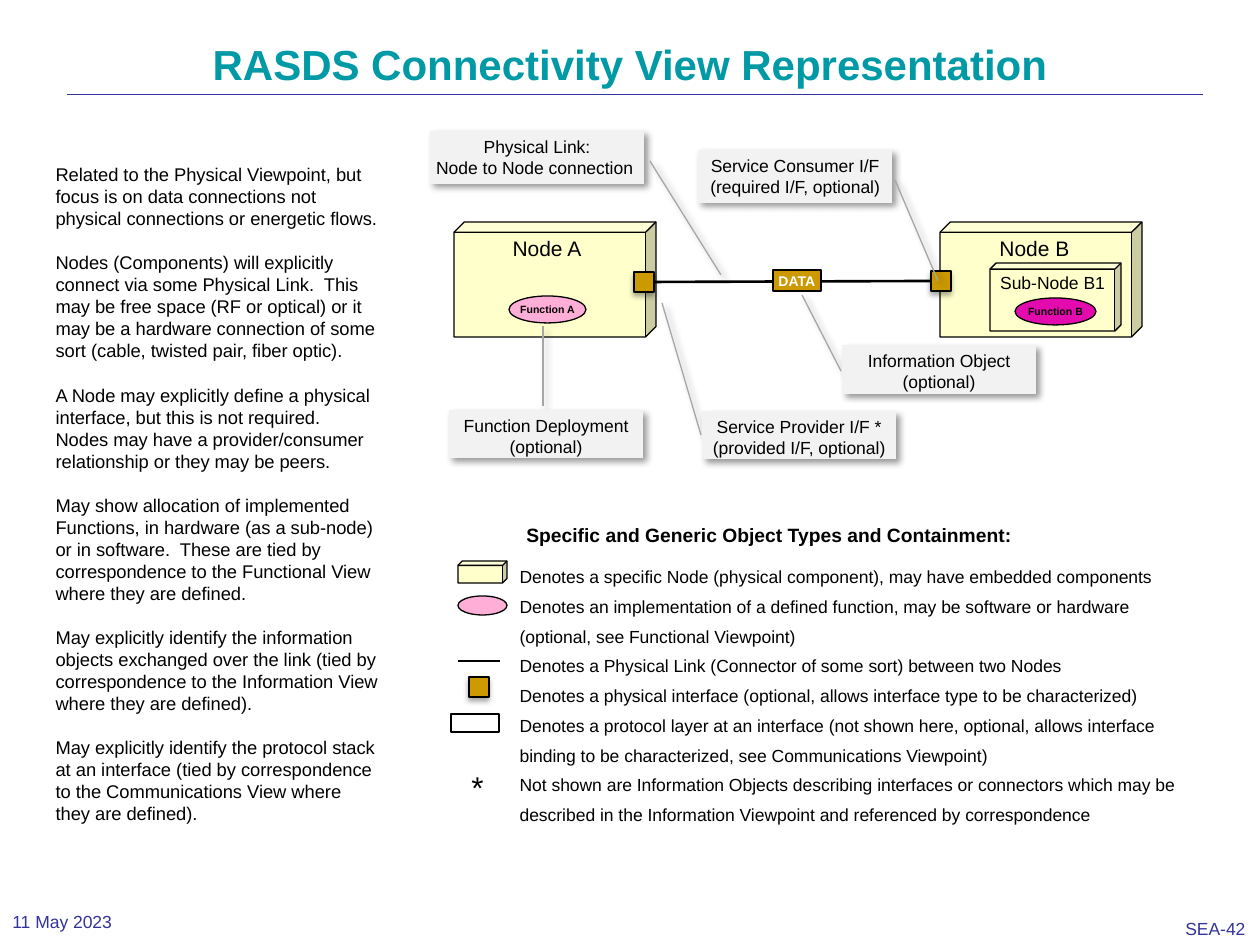
from dataclasses import dataclass

from lxml import etree
from pptx import Presentation
from pptx.dml.color import RGBColor
from pptx.enum.shapes import MSO_CONNECTOR, MSO_SHAPE
from pptx.enum.text import MSO_ANCHOR, MSO_AUTO_SIZE, PP_ALIGN
from pptx.oxml.ns import qn
from pptx.util import Pt

PX = 7257  # EMU per px, 126 px to the inch
TOP, MIDDLE = MSO_ANCHOR.TOP, MSO_ANCHOR.MIDDLE
LEFT, CENTER = PP_ALIGN.LEFT, PP_ALIGN.CENTER
CUBE, OVAL, RECT = MSO_SHAPE.CUBE, MSO_SHAPE.OVAL, MSO_SHAPE.RECTANGLE
CALLOUT = MSO_SHAPE.LINE_CALLOUT_1_NO_BORDER
STRAIGHT = MSO_CONNECTOR.STRAIGHT


@dataclass(frozen=True)
class Theme:
    font: str = "Arial"
    title: str = "0099A6"
    navy: str = "333399"
    black: str = "000000"
    white: str = "FFFFFF"
    node: str = "FFFFCC"
    port: str = "CC9900"
    function_a: str = "FFAED7"
    function_b: str = "E30BAD"
    callout: str = "F2F2F2"
    leader: str = "A6A6A6"
    title_pt: float = 24
    star_pt: float = 18
    node_pt: float = 12
    heading_pt: float = 11
    body_pt: float = 10.5
    label_pt: float = 10
    data_pt: float = 8
    function_pt: float = 6


T = Theme()
PORT_SHADOW = (35, 3.1, 1.8, 90)
CALLOUT_SHADOW = (40, 4, 3, 45)


def draw(kind, box, fill, line=T.black, shadow=None):
    """Add a preset shape; shadow is opacity %, blur pt, distance pt, angle."""
    sp = s.shapes.add_shape(kind, *[v * PX for v in box])
    sp.shadow.inherit = False
    sp.fill.solid()
    sp.fill.fore_color.rgb = RGBColor.from_string(fill)
    sp.line.color.rgb = RGBColor.from_string(line)
    sp.line.width = Pt(0.75)
    if shadow:
        alpha, blur, dist, angle = shadow
        effects = sp._element.spPr.find(qn("a:effectLst"))
        outer = etree.SubElement(
            effects, qn("a:outerShdw"), blurRad=str(Pt(blur)),
            dist=str(Pt(dist)), dir=str(angle * 60000), algn="ctr",
            rotWithShape="0")
        color = etree.SubElement(outer, qn("a:srgbClr"), val=T.black)
        etree.SubElement(color, qn("a:alpha"), val=str(alpha * 1000))
    return sp


def write(sp, text, size, color=T.black, bold=False, align=CENTER,
          anchor=TOP, wrap=False, inset=None):
    tf = sp.text_frame
    tf.text = text
    tf.word_wrap = wrap
    tf.auto_size = MSO_AUTO_SIZE.NONE
    tf.vertical_anchor = anchor
    if inset is not None:
        tf.margin_left = tf.margin_right = inset * PX
        tf.margin_top = tf.margin_bottom = inset * PX
    for p in tf.paragraphs:
        p.alignment = align
        p.font.name = T.font
        p.font.size = Pt(size)
        p.font.bold = bold
        p.font.color.rgb = RGBColor.from_string(color)


prs = Presentation()
prs.slide_width, prs.slide_height = 1260 * PX, 945 * PX
s = prs.slides.add_slide(prs.slide_layouts[3])
title, body, legend = s.placeholders

# Title and the two text columns
body_text = [
    "Related to the Physical Viewpoint, but focus is on data connections not physical connections or energetic flows.",
    "Nodes (Components) will explicitly connect via some Physical Link.  This may be free space (RF or optical) or it may be a hardware connection of some sort (cable, twisted pair, fiber optic).",
    "A Node may explicitly define a physical interface, but this is not required.  Nodes may have a provider/consumer relationship or they may be peers.",
    "May show allocation of implemented Functions, in hardware (as a sub-node) or in software.  These are tied by correspondence to the Functional View where they are defined.",
    "May explicitly identify the information objects exchanged over the link (tied by correspondence to the Information View where they are defined).",
    "May explicitly identify the protocol stack at an interface (tied by correspondence to the Communications View where they are defined).",
]
legend_text = [
    "Denotes a specific Node (physical component), may have embedded components",
    "Denotes an implementation of a defined function, may be software or hardware (optional, see Functional Viewpoint)",
    "Denotes a Physical Link (Connector of some sort) between two Nodes",
    "Denotes a physical interface (optional, allows interface type to be characterized)",
    "Denotes a protocol layer at an interface (not shown here, optional, allows interface binding to be characterized, see Communications Viewpoint)",
    "Not shown are Information Objects describing interfaces or connectors which may be described in the Information Viewpoint and referenced by correspondence",
]
for sp, box in [(title, (63, 38, 1134, 158)), (body, (43, 157, 349, 703)),
                (legend, (507, 551, 701, 280))]:
    sp.left, sp.top, sp.width, sp.height = [v * PX for v in box]

write(title, "RASDS Connectivity View Representation", T.title_pt, T.title,
      bold=True, wrap=True)
title.text_frame.paragraphs[0].line_spacing = 0.9

for sp, items, size, spacing, gap in [
        (body, body_text, T.body_pt, 1.0, 12.6),
        (legend, legend_text, T.label_pt, Pt(17), 0)]:
    write(sp, "\n".join(items), size, align=LEFT, wrap=True)
    for p in sp.text_frame.paragraphs:
        p.line_spacing = spacing
        p.space_before, p.space_after = Pt(0), Pt(gap)
        pPr = p._p.get_or_add_pPr()
        pPr.set("marL", "0")
        pPr.set("indent", "0")
        pPr.insert_element_before(etree.Element(qn("a:buNone")),
                                  "a:tabLst", "a:defRPr", "a:extLst")

# Nodes and interfaces
for box, depth in [((454, 222, 202, 115), 0.09), ((940, 222, 202, 115), 0.09),
                   ((990, 263, 131, 68), 0.09), ((458, 561, 49, 22), 0.2)]:
    draw(CUBE, box, T.node).adjustments[0] = depth

ports = [draw(RECT, (x, y, 20, 20), T.port, shadow=PORT_SHADOW)
         for x, y in [(634, 272), (931, 271), (469, 677)]]

# Title rule, physical link and its legend sample
rule, link, sample = [
    s.shapes.add_connector(STRAIGHT, x1 * PX, y * PX, x2 * PX, y * PX)
    for x1, x2, y in [(67, 1203, 94), (654, 931, 282), (458, 500, 661)]]
link.begin_connect(ports[0], 3)
link.end_connect(ports[1], 1)
for line, color, width in [(rule, T.navy, 0.13), (link, T.black, 1.5),
                           (sample, T.black, 1.5)]:
    line.line.color.rgb = RGBColor.from_string(color)
    line.line.width = Pt(width)
    etree.SubElement(line._element.spPr, qn("a:effectLst"))

# Information object, functions and remaining legend symbols
data = draw(RECT, (773, 270, 48, 21), T.port)
write(data, "DATA", T.data_pt, T.white, bold=True, wrap=True, inset=3)
for name, box, fill in [("Function A", (509, 296, 77, 27), T.function_a),
                        ("Function B", (1015, 298, 81, 27), T.function_b)]:
    write(draw(OVAL, box, fill), name, T.function_pt, bold=True, anchor=MIDDLE)
draw(OVAL, (458, 596, 49, 19), T.function_a)
draw(RECT, (451, 714, 48, 18), T.white)

# Callouts, each with the start and end of its leader
for text, box, start, end in [
        ("Physical Link:\vNode to Node connection ",
         (430, 131, 214, 53), (650, 161), (721, 275)),
        ("Service Provider I/F *\n(provided I/F, optional)",
         (702, 411, 194, 48), (701, 435), (662, 303)),
        ("Service Consumer I/F\n(required I/F, optional)",
         (698, 150, 194, 53), (895, 180), (938, 281)),
        ("Information Object\n(optional)",
         (842, 345, 194, 49), (841, 371), (802, 295)),
        ("Function Deployment\n(optional)",
         (449, 410, 194, 48), (543, 406), (543, 326))]:
    sp = draw(CALLOUT, box, T.callout, T.leader, CALLOUT_SHADOW)
    left, top, width, height = box
    for i, (x, y) in enumerate((start, end)):
        sp.adjustments[2 * i] = (y - top) / height
        sp.adjustments[2 * i + 1] = (x - left) / width
    write(sp, text, T.label_pt, wrap=True, inset=5)

# Free labels and footer
for text, box, size, color, bold, align, anchor in [
        ("Specific and Generic Object Types and Containment:",
         (514, 517, 515, 37), T.heading_pt, T.black, True, LEFT, TOP),
        ("Node A", (500, 229, 94, 38), T.node_pt, T.black, False, CENTER, TOP),
        ("Node B", (987, 229, 95, 38), T.node_pt, T.black, False, CENTER, TOP),
        ("Sub-Node B1", (987, 266, 131, 34), T.label_pt, T.black, False, CENTER, TOP),
        ("*", (459, 762, 38, 50), T.star_pt, T.black, False, LEFT, TOP),
        ("11 May 2023", (0, 903, 238, 37), T.label_pt, T.navy, False, LEFT, MIDDLE),
        ("SEA-42", (1173, 912, 86, 33), T.label_pt, T.navy, False, LEFT, TOP)]:
    tb = s.shapes.add_textbox(*[v * PX for v in box])
    write(tb, text, size, color, bold, align, anchor)

prs.save("out.pptx")
